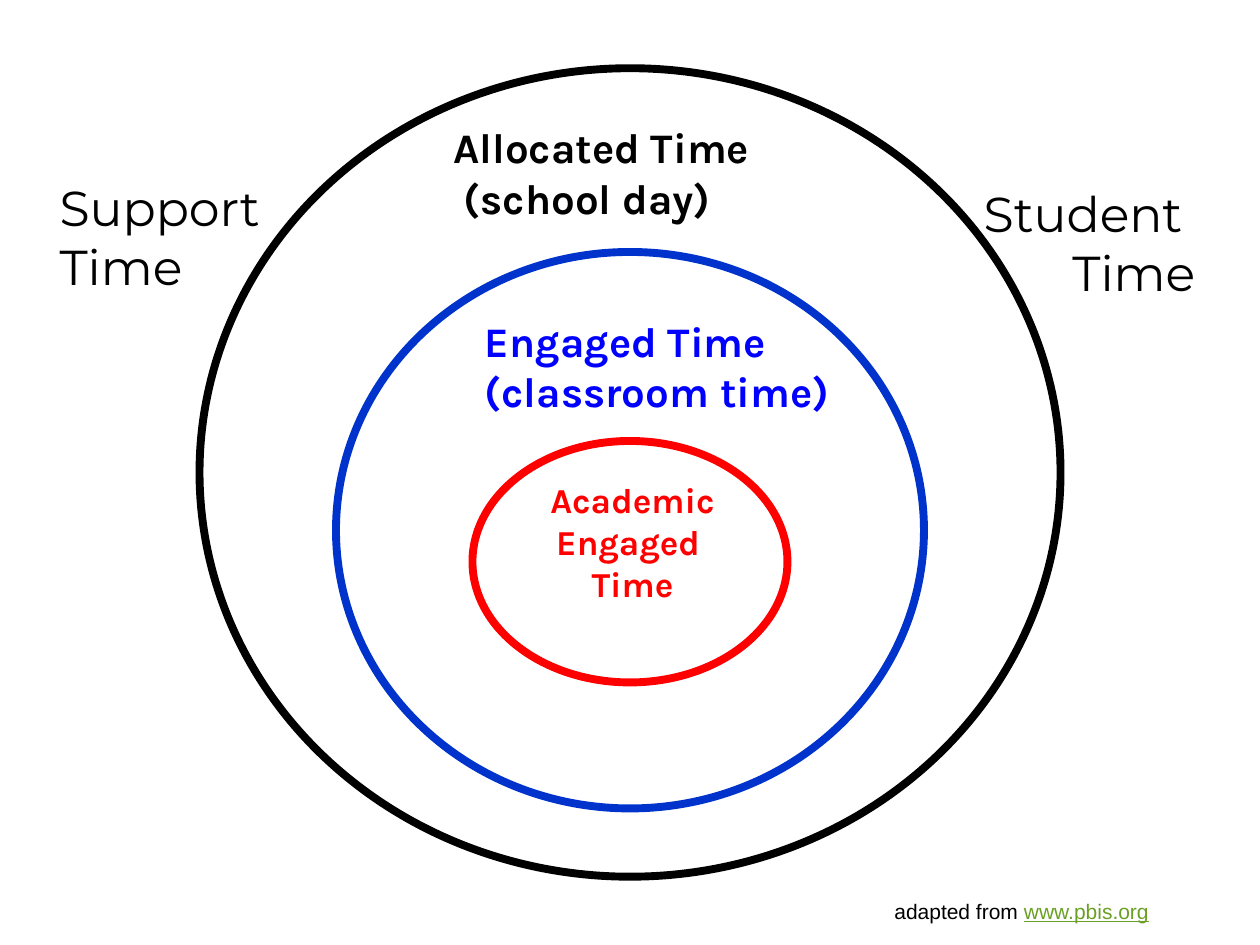
from pptx import Presentation
from pptx.dml.color import RGBColor
from pptx.enum.shapes import MSO_SHAPE
from pptx.enum.text import MSO_AUTO_SIZE, PP_ALIGN
from pptx.util import Pt

BLACK = RGBColor(0x00, 0x00, 0x00)
RED = RGBColor(0xFF, 0x00, 0x00)
RING_BLUE = RGBColor(0x00, 0x33, 0xCC)
TEXT_BLUE = RGBColor(0x00, 0x00, 0xFF)
LINK_GREEN = RGBColor(0x6B, 0x9F, 0x25)


class TimeDiagram:
    ring_weight = 4.5
    center_x = 360
    ring_font = "Karla"
    side_font = "Montserrat"
    source_font = "Arial"

    def __init__(self, slide):
        self.slide = slide

    def ring(self, top, width, height, color):
        ring = self.slide.shapes.add_shape(
            MSO_SHAPE.OVAL, Pt(self.center_x - width / 2), Pt(top), Pt(width), Pt(height))
        ring.shadow.inherit = False
        ring.fill.background()
        ring.line.color.rgb = color
        ring.line.width = Pt(self.ring_weight)

    def label(self, box, lines, font_name, size, color=BLACK, bold=False, align=PP_ALIGN.LEFT):
        label = self.slide.shapes.add_textbox(*map(Pt, box))
        frame = label.text_frame
        frame.word_wrap = True
        frame.auto_size = MSO_AUTO_SIZE.SHAPE_TO_FIT_TEXT
        frame.text = "\n".join(lines)
        for line in frame.paragraphs:
            line.alignment = align
            for run in line.runs:
                self.format_run(run, font_name, size, color, bold)
        return frame

    def ring_label(self, box, lines, size, color, align=PP_ALIGN.LEFT):
        self.label(box, lines, self.ring_font, size, color, True, align)

    def side_label(self, box, lines, align):
        self.label(box, lines, self.side_font, 28, align=align)

    def source(self, box, lead, site):
        credit = self.label(box, [lead], self.source_font, 12)
        address = credit.paragraphs[0].add_run()
        address.text = site
        self.format_run(address, self.source_font, 12, LINK_GREEN)
        address.font.underline = True

    @staticmethod
    def format_run(run, font_name, size, color, bold=False):
        run.font.name = font_name
        run.font.size = Pt(size)
        run.font.color.rgb = color
        run.font.bold = bold


def main():
    deck = Presentation()
    deck.slide_width, deck.slide_height = Pt(720), Pt(540)
    diagram = TimeDiagram(deck.slides.add_slide(deck.slide_layouts[6]))

    diagram.ring(252, 180, 138, RED)
    diagram.ring_label((304.5, 270, 114, 80), ["Academic", "Engaged ", "Time"],
                       20, RED, PP_ALIGN.CENTER)
    diagram.ring(144, 336, 318, RING_BLUE)
    diagram.ring_label((270, 176.5, 222, 65.5), ["Engaged Time", "(classroom time)"],
                       24, TEXT_BLUE)
    diagram.ring(39, 492, 462, BLACK)
    diagram.ring_label((252, 66, 216, 65.5), ["Allocated Time", " (school day)"], 24, BLACK)

    diagram.side_label((27, 98, 174, 75), ["Support", "Time"], PP_ALIGN.LEFT)
    diagram.side_label((492, 101.5, 198, 75), ["Student ", "Time"], PP_ALIGN.RIGHT)
    diagram.source((504, 510, 162, 21.5), "adapted from ", "www.pbis.org")

    deck.save("out.pptx")


if __name__ == "__main__":
    main()
